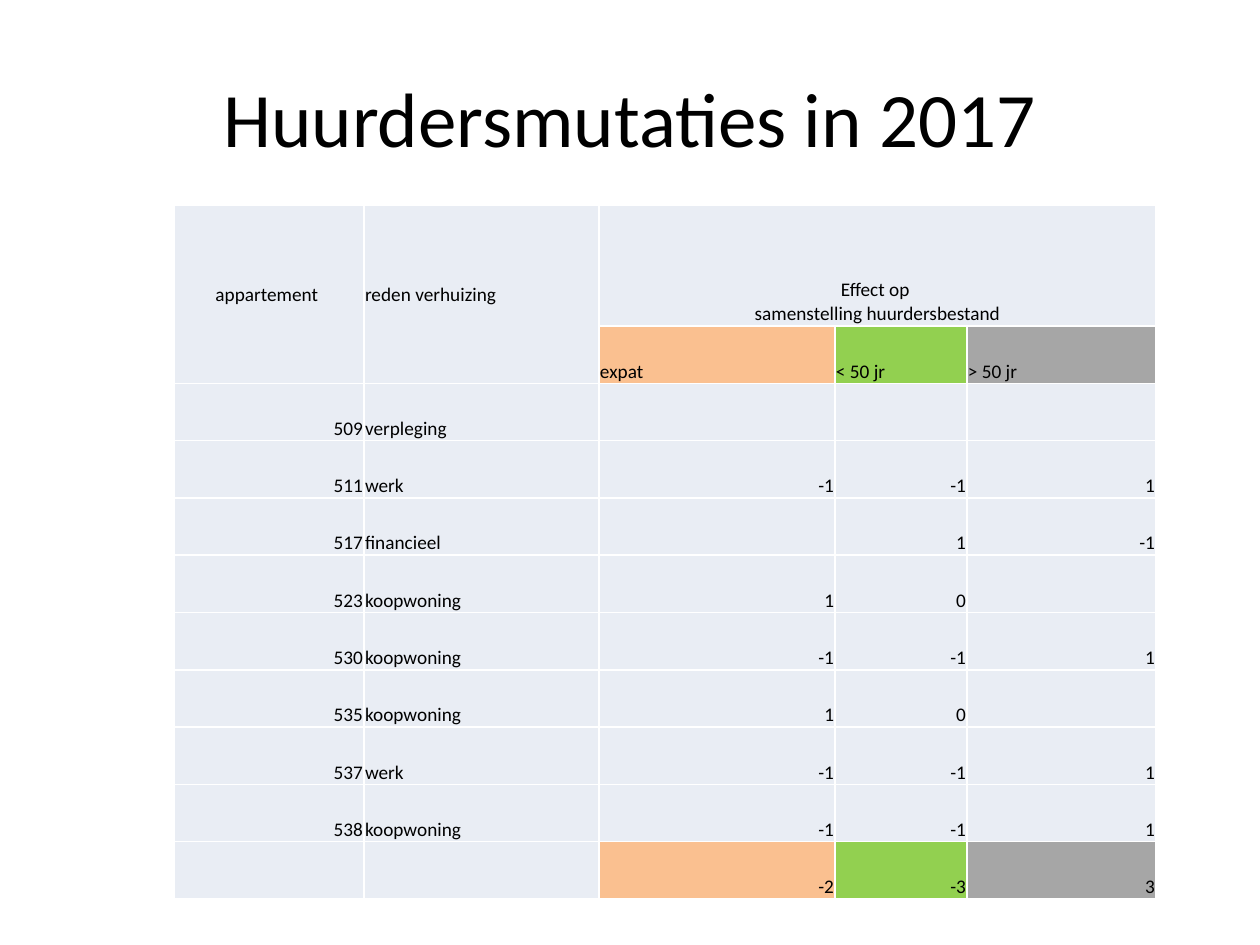
from lxml import etree
from pptx import Presentation
from pptx import util as u
from pptx.dml import color
from pptx.enum import text
from pptx.oxml import ns

SCALE = 914400 / 126
PALE = "E9EDF4"
AGE_FILLS = [PALE, PALE, "FAC090", "92D050", "A6A6A6"]
COLUMN_WIDTHS = [190, 235, 236, 132, 189]
HEADER_HEIGHT, BODY_HEIGHT = 121, 573
ROWS = [
    ["appartement ", "reden verhuizing",
     "Effect op \nsamenstelling huurdersbestand", "", ""],
    ["", "", "expat", "< 50 jr", "> 50 jr"],
    [509, "verpleging", "", "", ""],
    [511, "werk", -1, -1, 1],
    [517, "financieel", "", 1, -1],
    [523, "koopwoning", 1, 0, ""],
    [530, "koopwoning", -1, -1, 1],
    [535, "koopwoning", 1, 0, ""],
    [537, "werk", -1, -1, 1],
    [538, "koopwoning", -1, -1, 1],
    ["", "", -2, -3, 3],
]
CENTRED = [(0, 0), (0, 2)]
MERGES = [((0, 0), (1, 0)), ((0, 1), (1, 1)), ((0, 2), (0, 4))]
CELL_FORMAT = {"margin_left": 1, "margin_right": 1, "margin_top": 1, "margin_bottom": 0}


def px(length):
    """Turn pixels into EMU."""
    return u.Emu(round(length * SCALE))


def rgb(value):
    """Turn a hex string into a colour."""
    return color.RGBColor.from_string(value)


def write(paragraph, content, size, alignment):
    """Put black text of one size into a paragraph."""
    paragraph.text = str(content)
    paragraph.alignment = alignment
    for name, value in {"name": "Calibri", "size": u.Pt(size)}.items():
        setattr(paragraph.font, name, value)
    paragraph.font.color.rgb = rgb("000000")


def add_title(slide, content):
    """Add the centred slide title."""
    title = slide.shapes.add_textbox(px(63), px(38), px(1134), px(158))
    title.text_frame.word_wrap = True
    title.text_frame.vertical_anchor = text.MSO_ANCHOR.MIDDLE
    write(title.text_frame.paragraphs[0], content, 44, text.PP_ALIGN.CENTER)


def add_borders(cell):
    """Draw thin white lines on the four sides of a cell."""
    properties = cell._tc.get_or_add_tcPr()
    for side in ("lnL", "lnR", "lnT", "lnB"):
        line = etree.SubElement(properties, ns.qn(f"a:{side}"), w=str(u.Pt(1)))
        fill = etree.SubElement(line, ns.qn("a:solidFill"))
        etree.SubElement(fill, ns.qn("a:srgbClr"), val="FFFFFF")


def format_cell(cell, content, fill, anchor, alignment):
    """Write one table cell with its insets, borders and fill."""
    for name, value in CELL_FORMAT.items():
        setattr(cell, name, px(value))
    cell.vertical_anchor = anchor
    add_borders(cell)
    cell.fill.solid()
    cell.fill.fore_color.rgb = rgb(fill)
    write(cell.text_frame.paragraphs[0], content, 11, alignment)


def add_mutations(slide):
    """Add the table of tenant changes and their effect per group."""
    table = slide.shapes.add_table(
        len(ROWS), len(COLUMN_WIDTHS), px(174), px(205),
        px(sum(COLUMN_WIDTHS)), px(HEADER_HEIGHT + BODY_HEIGHT)).table
    for column, width in zip(table.columns, COLUMN_WIDTHS):
        column.width = px(width)
    for row in table.rows:
        row.height = u.Emu(px(BODY_HEIGHT) // (len(ROWS) - 1))
    table.rows[0].height = px(HEADER_HEIGHT)
    for r, values in enumerate(ROWS):
        fills = AGE_FILLS if r in (1, len(ROWS) - 1) else [PALE] * len(values)
        for c, (content, fill) in enumerate(zip(values, fills)):
            alignment = text.PP_ALIGN.RIGHT if isinstance(content, int) else text.PP_ALIGN.LEFT
            if (r, c) in CENTRED:
                alignment = text.PP_ALIGN.CENTER
            anchor = text.MSO_ANCHOR.MIDDLE if r == 0 and c < 2 else text.MSO_ANCHOR.BOTTOM
            format_cell(table.cell(r, c), content, fill, anchor, alignment)
    for first, last in MERGES:
        table.cell(*first).merge(table.cell(*last))


def main():
    """Build and save the slide."""
    deck = Presentation()
    deck.slide_width, deck.slide_height = px(1260), px(945)
    slide = deck.slides.add_slide(deck.slide_layouts[6])
    add_title(slide, "Huurdersmutaties in 2017")
    add_mutations(slide)
    deck.save("out.pptx")


if __name__ == "__main__":
    main()
